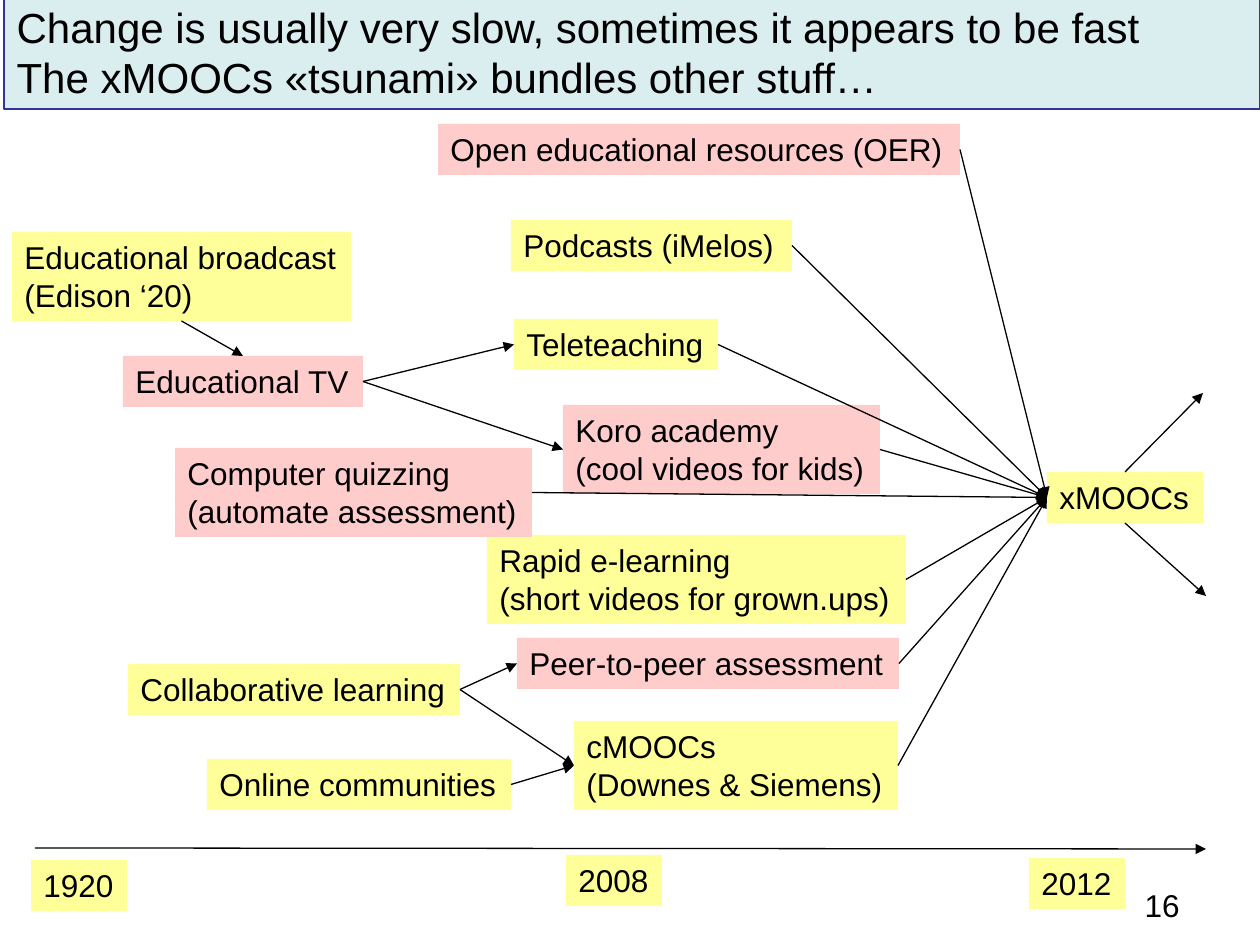
import pptx
import pptx.dml.color
import pptx.enum.shapes
import pptx.enum.text
import pptx.oxml
import pptx.oxml.ns
import pptx.util

TOP, LEFT, BOTTOM, RIGHT = range(4)
YELLOW, PINK, BLACK = "FFFF99", "FFCCCC", "000000"


def color(value):
    return pptx.dml.color.RGBColor.from_string(value)


def px(value):
    return pptx.util.Emu(round(value * 914400 / 126))


class Diagram:
    """Style and current slide of a diagram of boxes joined by arrows."""

    font_name = "Arial"
    text_size = 18
    line_height = 38
    padding = 13

    def __init__(self, slide):
        self.slide = slide

    def set_text(self, shape, text, size=text_size, align=pptx.enum.text.PP_ALIGN.LEFT):
        text_frame = shape.text_frame
        text_frame.text = text
        text_frame.word_wrap = True
        text_frame.auto_size = pptx.enum.text.MSO_AUTO_SIZE.NONE
        text_frame.vertical_anchor = pptx.enum.text.MSO_ANCHOR.TOP
        for paragraph in text_frame.paragraphs:
            paragraph.alignment = align
            for run in paragraph.runs:
                run.font.name = self.font_name
                run.font.size = pptx.util.Pt(size)
                run.font.color.rgb = color(BLACK)

    def fill(self, shape, value):
        shape.fill.solid()
        shape.fill.fore_color.rgb = color(value)

    def title(self, text, left, top, width, height):
        shape = self.slide.shapes.title
        shape.left, shape.top, shape.width, shape.height = map(px, (left, top, width, height))
        self.set_text(shape, text, 24)
        self.fill(shape, "DAEDEF")
        shape.line.color.rgb = color("333399")
        shape.line.width = pptx.util.Pt(1)

    def number(self, text, left, top, width, height):
        shape = self.slide.shapes.add_textbox(*map(px, (left, top, width, height)))
        self.set_text(shape, text, align=pptx.enum.text.PP_ALIGN.RIGHT)

    def box(self, text, left, top, width, fill=YELLOW):
        height = self.padding + self.line_height * len(text.splitlines())
        shape = self.slide.shapes.add_shape(
            pptx.enum.shapes.MSO_SHAPE.RECTANGLE, *map(px, (left, top, width, height)))
        shape.shadow.inherit = False
        shape.line.fill.background()
        self.fill(shape, fill)
        self.set_text(shape, text)
        shape.text_frame.margin_right = 0
        return shape

    def arrow(self, begin_x=0, begin_y=0, end_x=0, end_y=0):
        connector = self.slide.shapes.add_connector(
            pptx.enum.shapes.MSO_CONNECTOR.STRAIGHT,
            *map(px, (begin_x, begin_y, end_x, end_y)))
        connector.line.color.rgb = color(BLACK)
        connector.line.width = pptx.util.Pt(0.75)
        namespace = pptx.oxml.ns.nsdecls("a")
        properties = connector._element.spPr
        properties.find(pptx.oxml.ns.qn("a:ln")).append(
            pptx.oxml.parse_xml(f'<a:tailEnd {namespace} type="triangle"/>'))
        properties.append(pptx.oxml.parse_xml(f"<a:effectLst {namespace}/>"))
        return connector

    def link(self, begin, end, begin_side=RIGHT, end_side=LEFT):
        connector = self.arrow()
        connector.begin_connect(begin, begin_side)
        connector.end_connect(end, end_side)

    def leave(self, begin, side, end_x, end_y):
        self.arrow(end_x=end_x, end_y=end_y).begin_connect(begin, side)


def main():
    presentation = pptx.Presentation()
    presentation.slide_width, presentation.slide_height = px(1260), px(945)
    diagram = Diagram(presentation.slides.add_slide(presentation.slide_layouts[5]))

    diagram.title("Change is usually very slow, sometimes it appears to be fast\n"
                  "The xMOOCs «tsunami» bundles other stuff…", 4, -5, 1256, 114)
    diagram.number("16", 898, 880, 294, 39)

    resources = diagram.box("Open educational resources (OER)", 438, 124, 522, PINK)
    podcasts = diagram.box("Podcasts (iMelos)", 511, 220, 281)
    broadcast = diagram.box("Educational broadcast\n(Edison ‘20)", 12, 232, 339)
    teleteaching = diagram.box("Teleteaching", 514, 319, 204)
    television = diagram.box("Educational TV", 123, 356, 240, PINK)
    academy = diagram.box("Koro academy\n(cool videos for kids)", 563, 405, 317, PINK)
    rapid = diagram.box("Rapid e-learning\n(short videos for grown.ups)", 487, 535, 419)
    quizzing = diagram.box("Computer quizzing\n(automate assessment)", 175, 448, 357, PINK)
    peer = diagram.box("Peer-to-peer assessment", 517, 638, 382, PINK)
    collaborative = diagram.box("Collaborative learning", 128, 664, 332)
    cmoocs = diagram.box("cMOOCs\n(Downes & Siemens)", 574, 721, 324)
    communities = diagram.box("Online communities", 207, 759, 304)
    xmoocs = diagram.box("xMOOCs", 1047, 472, 156)

    for source in (resources, podcasts, teleteaching, academy,
                   quizzing, rapid, peer, cmoocs):
        diagram.link(source, xmoocs)
    for source, target in ((television, teleteaching), (television, academy),
                           (collaborative, peer), (collaborative, cmoocs),
                           (communities, cmoocs)):
        diagram.link(source, target)
    diagram.link(broadcast, television, BOTTOM, TOP)
    diagram.leave(xmoocs, TOP, 1203, 393)
    diagram.leave(xmoocs, BOTTOM, 1206, 596)

    diagram.arrow(35, 848, 1206, 849)
    for year, left, top in (("1920", 31, 860), ("2008", 566, 855), ("2012", 1029, 858)):
        diagram.box(year, left, top, 96)

    presentation.save("out.pptx")


if __name__ == "__main__":
    main()
